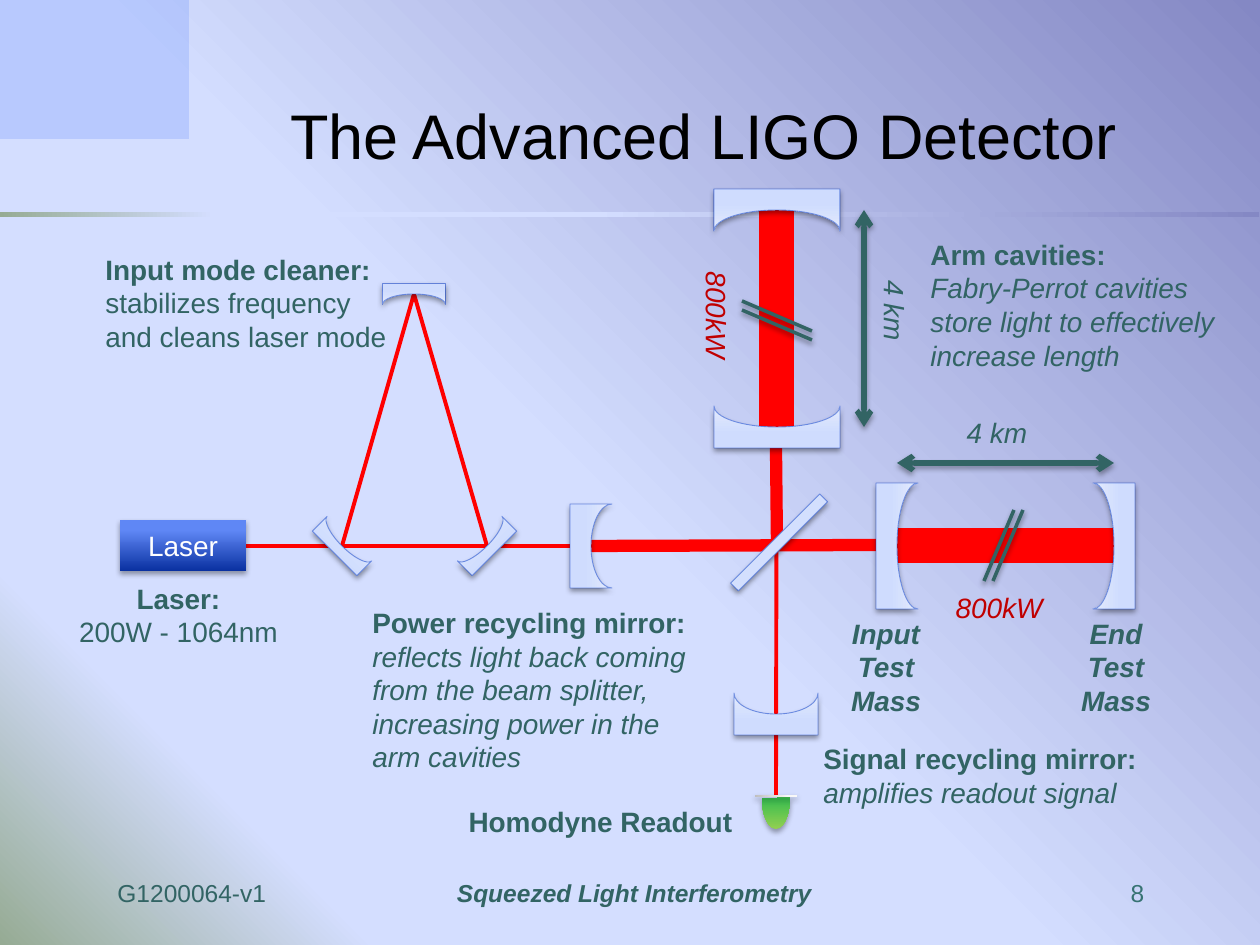
from lxml import etree
from pptx import Presentation
from pptx.dml.color import RGBColor
from pptx.enum.shapes import MSO_CONNECTOR, MSO_SHAPE as SHAPE
from pptx.enum.text import MSO_ANCHOR as ANCHOR, PP_ALIGN as ALIGN
from pptx.oxml.ns import qn
from pptx.util import Pt

PX = 914400 / 126
C = {
    "periwinkle": "8488C4", "sky": "D4DEFF", "sage": "96AB94", "corner": "7095FD",
    "beam": "FF0000", "teal": "326464", "page": "377373", "power": "C00000",
    "black": "000000", "white": "FFFFFF", "glass": "CFDCFE", "glass_light": "E4EBFC",
    "edge": "0337C6", "navy": "0A31A1", "blue": "5F87F5", "lime": "92D050",
    "green": "00B050", "pale": "F8F8F8", "grey": "BEBEBE",
}


def gradient(fill, element, stops, angle):
    """Fill with (percent, colour name) stops; angle is clockwise in degrees."""
    fill.gradient()
    grad = element.find(".//" + qn("a:gradFill"))
    stop_list = grad.find(qn("a:gsLst"))
    for old in list(stop_list):
        stop_list.remove(old)
    for percent, name in stops:
        gs = etree.SubElement(stop_list, qn("a:gs"), pos=str(percent * 1000))
        etree.SubElement(gs, qn("a:srgbClr"), val=C[name])
    grad.find(qn("a:lin")).set("ang", str(angle * 60000))


def shadow(s, alpha=0):
    """Add a soft shadow below the shape, or none at all when alpha is 0."""
    effects = etree.SubElement(s._element.spPr, qn("a:effectLst"))
    if alpha:
        outer = etree.SubElement(effects, qn("a:outerShdw"), blurRad="39370",
                                 dist="21590", dir="5400000", rotWithShape="0")
        color = etree.SubElement(outer, qn("a:srgbClr"), val=C["black"])
        etree.SubElement(color, qn("a:alpha"), val=str(alpha * 1000))


prs = Presentation()
prs.slide_width, prs.slide_height = round(1260 * PX), round(945 * PX)
slide = prs.slides.add_slide(prs.slide_layouts[6])
shapes = slide.shapes
gradient(slide.background.fill, slide.element,
         [(0, "periwinkle"), (53, "sky"), (83, "sky"), (100, "sage")], 135)

band = shapes.add_shape(SHAPE.RECTANGLE, 0, round(212 * PX), round(1259 * PX), round(5 * PX))
gradient(band.fill, band._element,
         [(0, "sage"), (17, "sky"), (47, "sky"), (100, "periwinkle")], 0)
corner = shapes.add_shape(SHAPE.RECTANGLE, 0, 0, round(189 * PX), round(139 * PX))
corner.fill.solid()
corner.fill.fore_color.rgb = RGBColor.from_string(C["corner"])
etree.SubElement(corner._element.spPr.find(".//" + qn("a:srgbClr")),
                 qn("a:alpha"), val="28000")
for s in (band, corner):
    s.line.fill.background()
    shadow(s)

# Light beams: x1, y1, x2, y2, width in points
beams = [
    (591, 546, 876, 545, 7), (777, 210, 777, 428, 20), (776, 448, 777, 545, 7),
    (1114, 546, 897, 546, 20), (246, 546, 1114, 546, 2.25), (414, 294, 342, 546, 2.25),
    (414, 294, 487, 546, 2.25), (777, 210, 776, 795, 2.25),
    (897, 546, 1114, 546, 10), (777, 427, 777, 210, 10),
]
# Arm lengths with arrowheads, then the break marks across the arms
arms = [(864, 210, 864, 427, 3), (897, 463, 1114, 463, 3)]
breaks = [(1014, 510, 984, 581, 2), (1023, 510, 993, 581, 2),
          (742, 301, 812, 331, 2), (742, 310, 812, 340, 2)]
for group, color, alpha in ((beams, "beam", 0), (arms, "teal", 35), (breaks, "teal", 38)):
    for *ends, width in group:
        s = shapes.add_connector(MSO_CONNECTOR.STRAIGHT, *(round(v * PX) for v in ends))
        s.line.color.rgb = RGBColor.from_string(C[color])
        s.line.width = Pt(width)
        if group is arms:
            for end in ("a:headEnd", "a:tailEnd"):
                etree.SubElement(s.line._get_or_add_ln(), qn(end), type="arrow")
        shadow(s, alpha)

# Laser, photodiode and its window: preset, x, y, w, h, rotation, gradient stops, angle
parts = [
    (SHAPE.RECTANGLE, 120, 520, 126, 51, 0,
     [(0, "navy"), (80, "blue"), (100, "blue")], 270),
    (SHAPE.PIE, 745, 784, 62, 28, 270, [(0, "lime"), (80, "green"), (100, "pale")], 0),
    (SHAPE.RECTANGLE, 755, 795, 42, 2, 0, [(0, "grey"), (80, "pale"), (100, "pale")], 0),
]
for preset, x, y, w, h, rotation, stops, angle in parts:
    s = shapes.add_shape(preset, *(round(v * PX) for v in (x, y, w, h)))
    s.rotation = rotation
    gradient(s.fill, s._element, stops, angle)
    s.line.fill.background()
    if preset == SHAPE.PIE:
        s.adjustments[0], s.adjustments[1] = 53.41, 162
    shadow(s, 35)

splitter = shapes.add_shape(SHAPE.RECTANGLE, *(round(v * PX) for v in (716, 537, 126, 11)))
splitter.rotation = 135
glass = [splitter]

# Curved mirrors: centre x, centre y, width, height, rotation
mirrors = [
    (414, 294, 63, 21, 0), (342, 546, 63, 21, 225), (487, 546, 63, 21, 135),
    (897, 546, 126, 42, 270), (1114, 546, 126, 42, 90), (777, 427, 126, 42, 180),
    (777, 210, 126, 42, 0), (591, 546, 84, 42, 270), (776, 714, 84, 42, 180),
]
# Half ellipse as two Bezier curves, in half widths and half heights from the centre
K = 0.55
OUTLINE = [(-1, 1), (-1, 1 - K), (-K, 0), (0, 0), (K, 0), (1, 1 - K), (1, 1), (1, -1)]
for cx, cy, w, h, rotation in mirrors:
    points = [(round((cx + u * w / 2) * PX), round((cy + v * h / 2) * PX)) for u, v in OUTLINE]
    builder = shapes.build_freeform(points[0][0], points[-1][1], scale=1.0)
    builder.add_line_segments(points, close=True)
    s = builder.convert_to_shape()
    s.rotation = rotation
    segments = s._element.findall(".//" + qn("a:lnTo"))
    for first in (1, 4):
        curve = etree.Element(qn("a:cubicBezTo"))
        segments[first].addprevious(curve)
        for segment in segments[first:first + 3]:
            curve.append(segment[0])
            segment.getparent().remove(segment)
    glass.append(s)

for s in glass:
    gradient(s.fill, s._element, [(0, "glass"), (35, "glass"), (100, "glass_light")], 90)
    s.line.color.rgb = RGBColor.from_string(C["edge"])
    s.line.width = Pt(0.5)
    etree.SubElement(s.line._get_or_add_ln().find(".//" + qn("a:srgbClr")),
                     qn("a:alpha"), val="50000")
    shadow(s, 38)

# Texts: x, y, w, h, rotation, wrap, alignment, size, paragraphs of (text, style, colour)
L, M = ALIGN.LEFT, ALIGN.CENTER
texts = [
    (231, 72, 945, 106, 0, True, M, 36, [[("The Advanced LIGO Detector", "", "black")]]),
    (105, 871, 1061, 43, 0, True, L, 14,
     [[("G1200064-v1\t", "", "teal"), ("Squeezed Light Interferometry\t", "bi", "teal"),
       ("8", "", "page")]]),
    (120, 520, 126, 51, 0, True, M, 16, [[("Laser", "", "white")]]),
    (65, 575, 227, 80, 0, False, M, 16,
     [[("Laser:", "b", "teal")], [("200W - 1064nm", "", "teal")]]),
    (93, 245, 310, 115, 0, False, L, 16,
     [[("Input mode cleaner:", "b", "teal")], [("stabilizes frequency", "", "teal")],
      [("and cleans laser mode", "", "teal")]]),
    (918, 230, 311, 149, 0, True, L, 16,
     [[("Arm cavities:", "b", "teal")],
      [("Fabry-Perrot cavities store light to effectively increase length", "i", "teal")]]),
    (443, 798, 315, 47, 0, True, M, 16, [[("Homodyne Readout", "b", "teal")]]),
    (811, 735, 352, 81, 0, True, L, 16,
     [[("Signal recycling mirror: ", "b", "teal"), ("amplifies readout signal", "i", "teal")]]),
    (360, 598, 352, 183, 0, True, L, 16,
     [[("Power recycling mirror: ", "b", "teal"),
       ("reflects light back coming from the beam splitter, "
        "increasing power in the arm cavities", "i", "teal")]]),
]
for x, name in ((838, "Input"), (1068, "End")):
    texts.append((x, 609, 96, 115, 0, False, M, 16,
                  [[(word, "bi", "teal")] for word in (name, "Test", "Mass")]))
for x, y, rotation, label, color in (
        (832, 248, 90, "4 km", "teal"), (934, 369, 0, "4 km", "teal"),
        (936, 544, 0, "800kW", "power"), (654, 252, 90, "800kW", "power")):
    texts.append((x, y, 126, 126, rotation, False, M, 16, [[(label, "i", color)]]))

for x, y, w, h, rotation, wrap, align, size, paragraphs in texts:
    s = shapes.add_textbox(*(round(v * PX) for v in (x, y, w, h)))
    s.rotation = rotation
    tf = s.text_frame
    tf.word_wrap = wrap
    tf.vertical_anchor = ANCHOR.BOTTOM if size == 36 else ANCHOR.MIDDLE
    for i, runs in enumerate(paragraphs):
        p = tf.add_paragraph() if i else tf.paragraphs[0]
        p.alignment = align
        if size == 14:
            tabs = etree.SubElement(p._p.get_or_add_pPr(), qn("a:tabLst"))
            for pos, kind in ((517, "ctr"), (1027, "r")):
                etree.SubElement(tabs, qn("a:tab"), pos=str(round(pos * PX)), algn=kind)
        for text, style, color in runs:
            r = p.add_run()
            r.text = text
            r.font.name, r.font.size = "Arial", Pt(size)
            r.font.bold, r.font.italic = "b" in style, "i" in style
            r.font.color.rgb = RGBColor.from_string(C[color])

prs.save("out.pptx")
